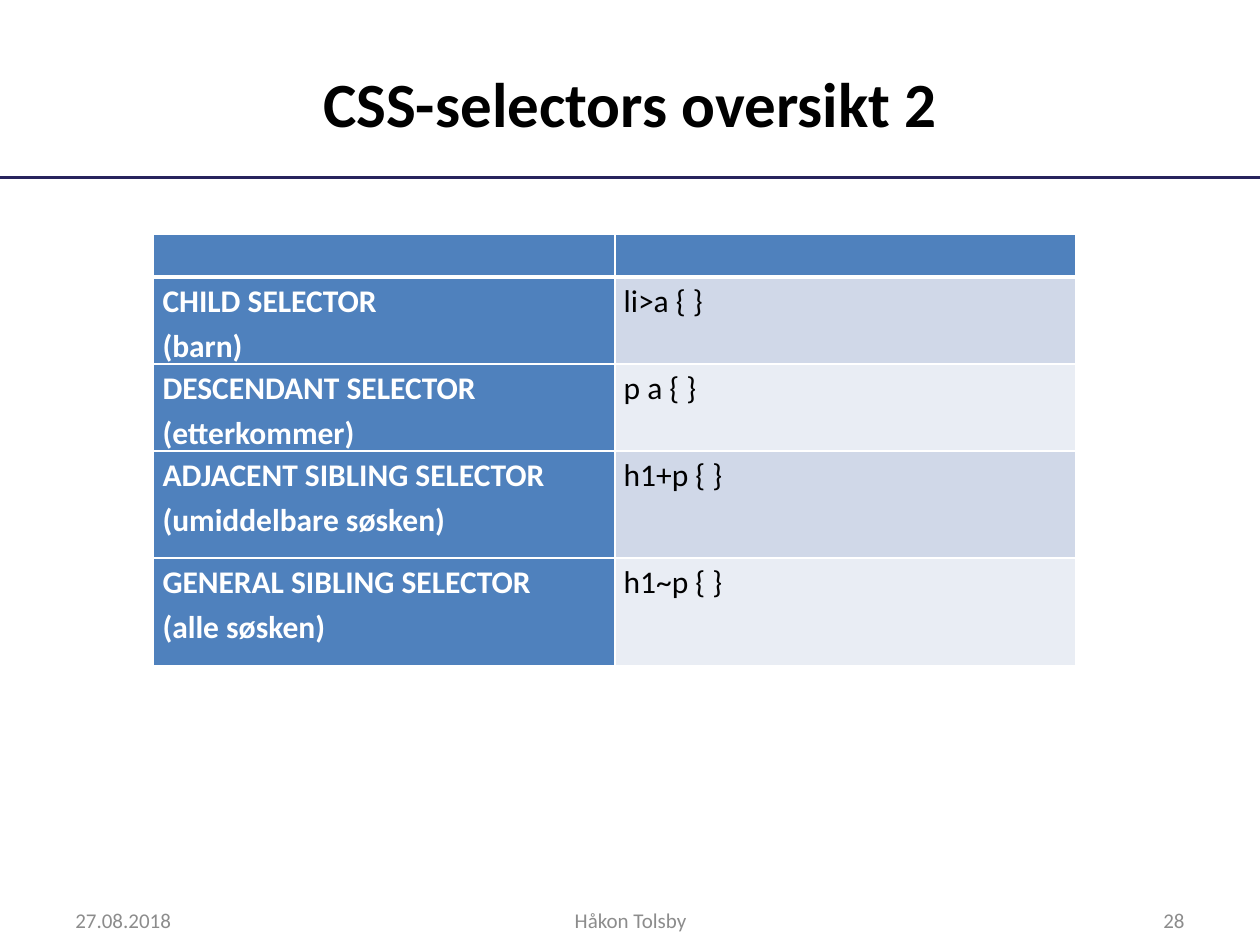
from dataclasses import dataclass

from lxml.etree import SubElement
from pptx import Presentation
from pptx.dml.color import RGBColor
from pptx.enum.shapes import MSO_CONNECTOR as Link
from pptx.enum.text import MSO_ANCHOR as Anchor, PP_ALIGN as Align
from pptx.oxml.ns import qn
from pptx.util import Inches, Pt

BLACK = RGBColor(0, 0, 0)
WHITE = RGBColor(255, 255, 255)
NAVY = RGBColor(0x28, 0x23, 0x5D)
GRAY = RGBColor(0x8C, 0x8C, 0x8C)
BLUE = RGBColor(0x4F, 0x81, 0xBD)
BANDS = RGBColor(0xD0, 0xD8, 0xE8), RGBColor(0xE9, 0xED, 0xF4)


@dataclass
class Foot:
    text: str
    left: float
    width: float
    align: Align


@dataclass
class Row:
    name: str
    code: str
    height: float


FEET = [
    Foot("27.08.2018", 0.5, 2.33, Align.LEFT),
    Foot("Håkon Tolsby", 3.42, 3.17, Align.CENTER),
    Foot("28", 7.17, 2.33, Align.RIGHT),
]
ROWS = [
    Row("CHILD SELECTOR\v(barn)", "li>a { }", 0.6),
    Row("DESCENDANT SELECTOR\v(etterkommer)", "p a { }", 0.63),
    Row("ADJACENT SIBLING SELECTOR\n(umiddelbare søsken)", "h1+p { }", 0.85),
    Row("GENERAL SIBLING SELECTOR\n(alle søsken)", "h1~p { }", 0.85),
]
HEAD = 0.34


def write(frame, text: str, *, size=18, color=BLACK, bold=False,
          align=Align.LEFT, space=None) -> None:
    frame.text = text
    frame.word_wrap = True
    for para in frame.paragraphs:
        para.alignment = align
        para.line_spacing = space
        for run in para.runs:
            font = run.font
            font.name = "Calibri"
            font.size = Pt(size)
            font.bold = bold
            font.color.rgb = color


def edge(cell, side: str, width: float) -> None:
    line = SubElement(cell._tc.get_or_add_tcPr(), qn(f"a:ln{side}"), w=str(Pt(width)))
    fill = SubElement(line, qn("a:solidFill"))
    SubElement(fill, qn("a:srgbClr"), val=str(WHITE))


def paint(cell, fill: RGBColor, top: float = 1, base: float = 1) -> None:
    cell.margin_left = cell.margin_right = Inches(0.07)
    cell.margin_top = cell.margin_bottom = 0
    for side, width in (("L", 1), ("R", 1), ("T", top), ("B", base)):
        edge(cell, side, width)
    cell.fill.solid()
    cell.fill.fore_color.rgb = fill


def draw_rule(slide) -> None:
    rule = slide.shapes.add_connector(Link.STRAIGHT, 0, Inches(1.41), Inches(10), Inches(1.41))
    rule.line.color.rgb = NAVY
    rule.line.width = Pt(2)
    SubElement(rule._element.spPr, qn("a:effectLst"))


def draw_title(slide) -> None:
    title = slide.shapes.title
    title.left, title.top = Inches(0.5), Inches(0.3)
    title.width, title.height = Inches(9), Inches(1.03)
    title.text_frame.vertical_anchor = Anchor.MIDDLE
    write(title.text_frame, "CSS-selectors oversikt 2", size=36, bold=True, align=Align.CENTER)


def draw_foot(slide, foot: Foot) -> None:
    box = slide.shapes.add_textbox(Inches(foot.left), Inches(7.1), Inches(foot.width), Inches(0.4))
    box.text_frame.vertical_anchor = Anchor.MIDDLE
    write(box.text_frame, foot.text, size=12, color=GRAY, align=foot.align)


def draw_table(slide) -> None:
    high = HEAD + sum(row.height for row in ROWS)
    table = slide.shapes.add_table(
        len(ROWS) + 1, 2, Inches(1.22), Inches(1.86), Inches(7.32), Inches(high)).table
    table.first_col = True
    table.rows[0].height = Inches(HEAD)
    for cell in table.rows[0].cells:
        paint(cell, BLUE, base=3)
    for i, row in enumerate(ROWS):
        line = table.rows[i + 1]
        line.height = Inches(row.height)
        name, code = line.cells
        top = 1 if i else 3
        paint(name, BLUE, top)
        paint(code, BANDS[i % 2], top)
        write(name.text_frame, row.name, color=WHITE, bold=True, space=1.15)
        write(code.text_frame, row.code, space=1.15)


def main() -> None:
    deck = Presentation()
    deck.slide_width, deck.slide_height = Inches(10), Inches(7.5)
    slide = deck.slides.add_slide(deck.slide_layouts[5])
    draw_rule(slide)
    draw_title(slide)
    for foot in FEET:
        draw_foot(slide, foot)
    draw_table(slide)
    deck.save("out.pptx")


if __name__ == "__main__":
    main()
